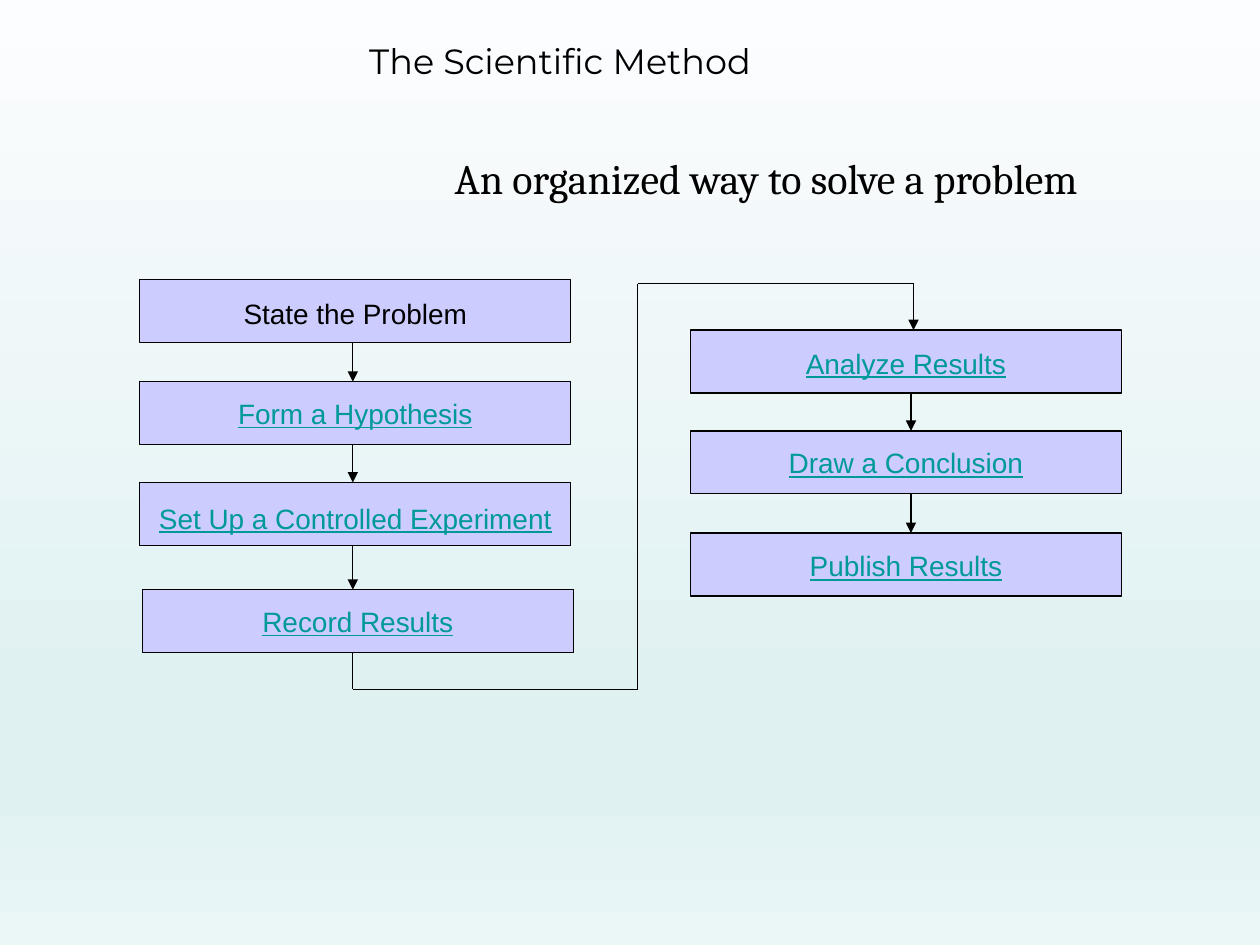
import pptx
import pptx.util
import pptx.dml.color
import pptx.enum.shapes
import pptx.enum.text
import pptx.oxml.ns
from lxml import etree

Inches = pptx.util.Inches
Pt = pptx.util.Pt
qn = pptx.oxml.ns.qn
ALIGN = pptx.enum.text.PP_ALIGN
ANCHOR = pptx.enum.text.MSO_ANCHOR

COLORS = {"text": "000000", "link": "009999", "box": "CCCCFF"}
BACKGROUND = [(0, "FCFDFE"), (74, "E0F1F2"), (83, "E0F1F2"), (100, "EBF6F7")]
BOX_W, BOX_H = 3.42, 0.5
ARROW_LENGTH = 0.44


def rgb(name):
    return pptx.dml.color.RGBColor.from_string(COLORS[name])


def set_text(sp, text, font, size, color="text", align=ALIGN.LEFT, anchor=ANCHOR.TOP,
             wrap=False):
    tf = sp.text_frame
    tf.text = text
    tf.word_wrap = wrap
    tf.auto_size = pptx.enum.text.MSO_AUTO_SIZE.NONE
    tf.vertical_anchor = anchor
    p = tf.paragraphs[0]
    p.alignment = align
    f = p.runs[0].font
    f.name, f.size, f.underline = font, Pt(size), color == "link"
    f.color.rgb = rgb(color)


def add_background(s):
    fill = s.background.fill
    fill.gradient()
    fill.gradient_angle = 270
    stops = s.element.xpath(".//p:bg//a:gsLst")[0]
    for gs in list(stops):
        stops.remove(gs)
    for pos, color in BACKGROUND:
        gs = etree.SubElement(stops, qn("a:gs"), pos=str(pos * 1000))
        etree.SubElement(gs, qn("a:srgbClr"), val=color)


def add_line(s, start, end, arrow=False):
    cx = s.shapes.add_connector(pptx.enum.shapes.MSO_CONNECTOR.STRAIGHT,
                                *[Inches(v) for v in (*start, *end)])
    cx.line.color.rgb = rgb("text")
    cx.line.width = Pt(0.75)
    spPr = cx._element.spPr
    if arrow:
        etree.SubElement(spPr.find(qn("a:ln")), qn("a:tailEnd"), type="triangle")
    etree.SubElement(spPr, qn("a:effectLst"))


def add_header(s, left, top):
    title = s.shapes.title
    title.left, title.top = Inches(left), Inches(top)
    title.width, title.height = Inches(5.58), Inches(0.43)
    set_text(title, "The Scientific Method", "Montserrat", 20, wrap=True)
    subtitle = s.shapes.add_textbox(Inches(left + 0.68), Inches(top + 0.9),
                                    Inches(5.2), Inches(0.5))
    set_text(subtitle, "An organized way to solve a problem", "Cambria", 24)


def add_step_column(s, arrow_x, steps):
    for left, top, text, color, drop in steps[1:]:
        add_line(s, (arrow_x, top - ARROW_LENGTH), (arrow_x, top), arrow=True)
    for left, top, text, color, drop in steps:
        sp = s.shapes.add_shape(pptx.enum.shapes.MSO_SHAPE.RECTANGLE, Inches(left),
                                Inches(top), Inches(BOX_W), Inches(BOX_H))
        sp.shadow.inherit = False
        sp.fill.solid()
        sp.fill.fore_color.rgb = rgb("box")
        sp.line.color.rgb = rgb("text")
        sp.line.width = Pt(0.75)
        set_text(sp, text, "Arial", 16, color, ALIGN.CENTER, ANCHOR.MIDDLE)
        sp.text_frame.margin_top = Inches(0.05 + drop)


def add_return_path(s, start, end, low, middle, high):
    points = [start, (start[0], low), (middle, low), (middle, high), (end[0], high), end]
    for a, b in zip(points, points[1:]):
        add_line(s, a, b, arrow=b == end)


def main():
    prs = pptx.Presentation()
    prs.slide_width, prs.slide_height = Inches(10), Inches(7.5)
    s = prs.slides.add_slide(prs.slide_layouts[5])
    add_background(s)
    add_header(s, 2.83, 0.26)
    add_step_column(s, 2.8, [
        (1.11, 2.22, "State the Problem", "text", 0.03),
        (1.11, 3.03, "Form a Hypothesis", "link", 0),
        (1.11, 3.83, "Set Up a Controlled Experiment", "link", 0.06),
        (1.13, 4.68, "Record Results", "link", 0),
    ])
    add_step_column(s, 7.23, [
        (5.48, 2.62, "Analyze Results", "link", 0.02),
        (5.48, 3.42, "Draw a Conclusion", "link", 0),
        (5.48, 4.23, "Publish Results", "link", 0.02),
    ])
    add_return_path(s, (2.8, 4.68 + BOX_H), (7.25, 2.62), low=5.47, middle=5.06, high=2.25)
    prs.save("out.pptx")


if __name__ == "__main__":
    main()
